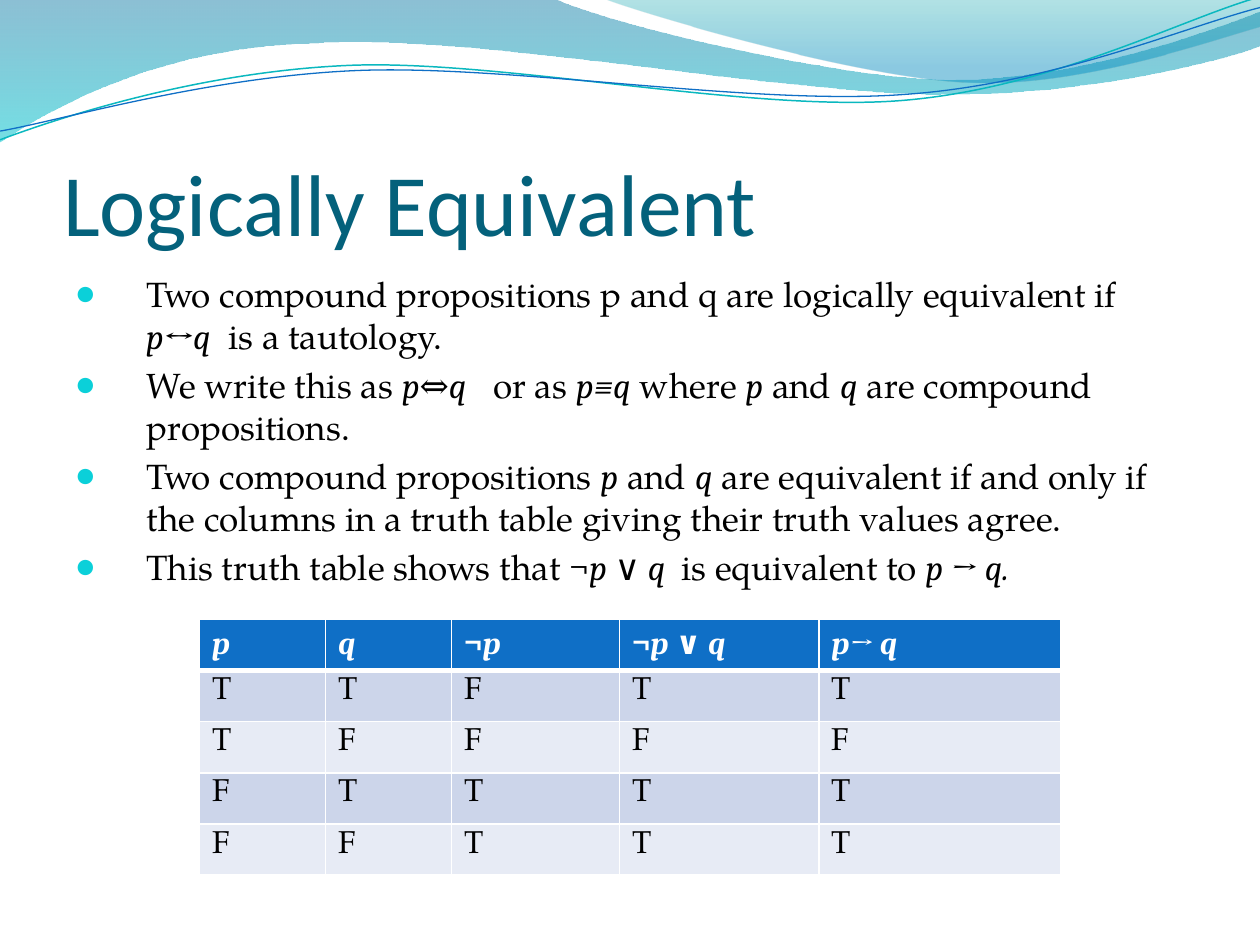
from itertools import groupby

from lxml.etree import SubElement
from pptx import Presentation
from pptx.dml.color import RGBColor
from pptx.enum.text import MSO_ANCHOR, PP_ALIGN
from pptx.oxml.ns import qn
from pptx.util import Pt

SERIF, MATH, SANS = "TeX Gyre Pagella", "Cambria", "Calibri"
BLACK, WHITE, BLUE = "000000", "FFFFFF", "0F6FC6"
UPRIGHT = "¬∨"

RIBBON = [(0, 0), (316.8, -0.7),
          ((342.7, 12.2), (478.1, 45.4), (545.8, 45.4)),
          ((614.2, 45.4), (689.8, 18.7), (720, 6.5)),
          (720.7, 25.9),
          ((707.8, 31.7), (626.4, 54.7), (537.1, 54)),
          ((447.8, 54), (275, 20.2), (185, 24.5)),
          ((92.9, 25.9), (33.1, 59.8), (-0.7, 81.4))]
CREST = [(344.9, -0.7),
         ((366.5, 7.9), (491, 44.6), (553.7, 46.8)),
         ((616.3, 49.7), (691.9, 23), (720, 15.1)),
         (720, 0)]
TEAL_LINE = [(0, 79.9),
             ((34.6, 67), (113.8, 41), (199.4, 37.4)),
             ((284.4, 33.8), (427, 64.1), (513.4, 57.6)),
             ((599.8, 51.1), (675.4, 10.8), (718.6, -1.4))]
BLUE_LINE = [(0, 74.9),
             ((33.8, 69.1), (118.1, 43.9), (203.8, 40.3)),
             ((290.2, 36.7), (429.8, 60.5), (516.2, 54)),
             ((601.9, 48.2), (677.5, 15.1), (720, 4.3))]

BULLETS = [
    "Two compound propositions p and q are logically equivalent if |p↔q|  is a tautology.",
    "We write this as |p⇔q|   or as |p≡q| where |p| and |q| are compound propositions.",
    "Two compound propositions |p| and |q| are equivalent if and only if "
    "the columns in a truth table giving their truth values agree.",
    "This truth table shows that |¬p ∨ q  |is equivalent to |p → q.|",
]
HEADINGS = ["p", "q", "¬p", "¬p ∨ q", "p→ q"]
TRUTH_ROWS = ["TTFTT", "TFFFF", "FTTTT", "FFTTT"]
COLUMN_WIDTHS = [72, 72, 96, 114, 138]


def color(value):
    return RGBColor.from_string(value)


def write_text(para, text, size, ink=BLACK, font=SERIF, bold=False):
    for index, piece in enumerate(text.split("|")):
        is_math = index % 2 == 1
        for upright, letters in groupby(piece, lambda c: not is_math or c in UPRIGHT):
            span = para.add_run()
            span.text = "".join(letters)
            span.font.name = MATH if is_math else font
            span.font.size = Pt(size)
            span.font.bold = bold
            span.font.italic = not upright
            span.font.color.rgb = color(ink)


def add_outline(page, left, top, outline, close):
    def place(point):
        return Pt(left + point[0]), Pt(top + point[1])

    start, *parts = outline
    curves = [part if len(part) == 3 else None for part in parts]
    anchors = [place(part[-1] if len(part) == 3 else part) for part in parts]
    builder = page.shapes.build_freeform(*place(start), scale=1.0)
    builder.add_line_segments(anchors, close=close)
    shape = builder.convert_to_shape()
    shape.shadow.inherit = False
    segments = list(shape._element.iter(qn("a:lnTo")))
    for segment, curve in zip(segments, curves):
        if curve:
            bezier = segment.makeelement(qn("a:cubicBezTo"))
            for x, y in map(place, curve):
                SubElement(bezier, qn("a:pt"), x=str(x - shape.left), y=str(y - shape.top))
            segment.getparent().replace(segment, bezier)
    return shape


def add_wave(page, left, top, outline, stops):
    shape = add_outline(page, left, top, outline, True)
    shape.line.fill.background()
    shape.fill.gradient()
    shape.fill.gradient_angle = 270
    for stop, (position, value, opacity) in zip(shape.fill.gradient_stops, stops):
        stop.position = position
        stop.color.rgb = color(value)
    values = list(shape._element.spPr.iter(qn("a:srgbClr")))
    for value, stop in zip(values, stops):
        SubElement(value, qn("a:alpha"), val=str(stop[2] * 1000))


def add_curve(page, left, top, outline, value, width):
    shape = add_outline(page, left, top, outline, False)
    shape.fill.background()
    shape.line.color.rgb = color(value)
    shape.line.width = Pt(width)


def add_header_waves(page, left, top):
    add_wave(page, left, top, RIBBON, [(0, "0074A1", 45), (1, "00C6CF", 55)])
    add_wave(page, left, top, CREST, [(0, "00A1A9", 30), (0.8, "008BBF", 45)])
    add_curve(page, left, top, TEAL_LINE, "0AB8BF", 0.85)
    add_curve(page, left, top, BLUE_LINE, BLUE, 0.75)


def place_title(page, left, top, width, height, text):
    title = page.shapes.title
    title.left, title.top, title.width, title.height = map(Pt, (left, top, width, height))
    frame = title.text_frame
    frame.margin_left = frame.margin_right = frame.margin_bottom = 0
    frame.margin_top = Pt(3.6)
    frame.vertical_anchor = MSO_ANCHOR.BOTTOM
    para = frame.paragraphs[0]
    para.alignment = PP_ALIGN.LEFT
    write_text(para, text, 50, ink="04617B", font=SANS)


def add_bullet(para, indent):
    properties = para._p.get_or_add_pPr()
    properties.set("marL", str(Pt(indent)))
    properties.set("indent", str(-Pt(indent)))
    tint = SubElement(properties, qn("a:buClr"))
    SubElement(tint, qn("a:srgbClr"), val="0BD0D9")
    SubElement(properties, qn("a:buSzPct"), val="95000")
    SubElement(properties, qn("a:buFont"), typeface=SANS)
    SubElement(properties, qn("a:buChar"), char="●")


def add_bullets(page, left, top, width, height, lines):
    box = page.shapes.add_textbox(*map(Pt, (left, top, width, height)))
    frame = box.text_frame
    frame.word_wrap = True
    for index, line in enumerate(lines):
        para = frame.add_paragraph() if index else frame.paragraphs[0]
        para.space_before = Pt(4)
        add_bullet(para, 40.5)
        write_text(para, line, 20)


def add_borders(cell, **widths):
    properties = cell._tc.get_or_add_tcPr()
    for side in "LRTB":
        edge = SubElement(properties, qn(f"a:ln{side}"), w=str(Pt(widths.get(side, 1))))
        fill = SubElement(edge, qn("a:solidFill"))
        SubElement(fill, qn("a:srgbClr"), val=WHITE)


def add_truth_table(page, left, top, row_height):
    rows = [HEADINGS, *TRUTH_ROWS]
    frame = page.shapes.add_table(len(rows), len(HEADINGS), Pt(left), Pt(top),
                                  Pt(sum(COLUMN_WIDTHS)), Pt(row_height * len(rows)))
    table = frame.table
    for column, width in zip(table.columns, COLUMN_WIDTHS):
        column.width = Pt(width)
    for r, values in enumerate(rows):
        for c, value in enumerate(values):
            cell = table.cell(r, c)
            para = cell.text_frame.paragraphs[0]
            if r == 0:
                shade = BLUE
                add_borders(cell, B=3)
                write_text(para, f"|{value}|", 18, ink=WHITE, bold=True)
            else:
                shade = "CCD5EA" if r % 2 else "E7EBF5"
                add_borders(cell, T=3 if r == 1 else 1)
                write_text(para, value, 18)
            cell.fill.solid()
            cell.fill.fore_color.rgb = color(shade)


def main():
    deck = Presentation()
    deck.slide_width, deck.slide_height = Pt(720), Pt(540)
    page = deck.slides.add_slide(deck.slide_layouts[5])
    page.background.fill.solid()
    page.background.fill.fore_color.rgb = color(WHITE)
    add_header_waves(page, 0, 0)
    place_title(page, 36, 55.2, 648, 90, "Logically Equivalent")
    add_bullets(page, 36, 152.2, 648, 345.6, BULLETS)
    add_truth_table(page, 114, 354, 29.2)
    deck.save("out.pptx")


if __name__ == "__main__":
    main()
